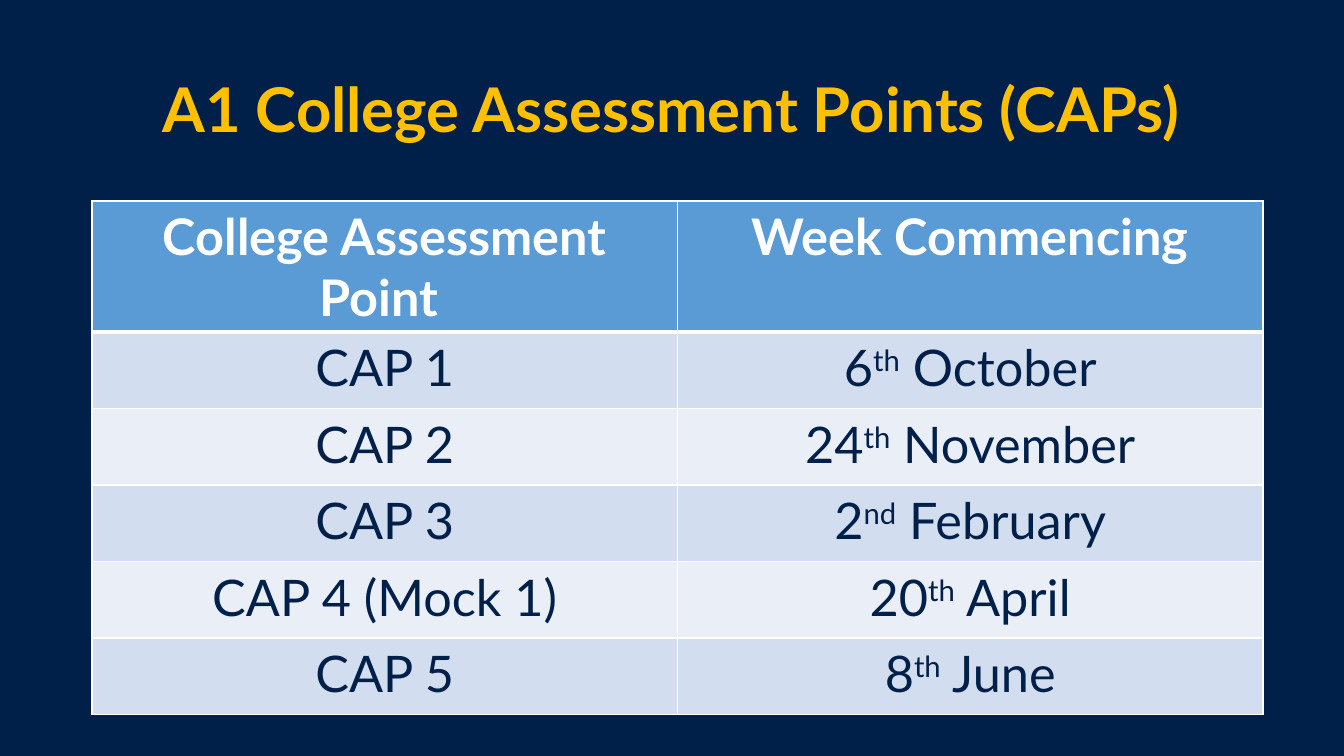
from dataclasses import dataclass

from lxml import etree
from pptx import Presentation
from pptx.dml.color import RGBColor
from pptx.enum.text import MSO_ANCHOR, PP_ALIGN
from pptx.oxml.ns import qn
from pptx.util import Emu, Pt

CENTER = PP_ALIGN.CENTER
MIDDLE = MSO_ANCHOR.MIDDLE
EMU_PER_PX = 914400 / 100.8
SLIDE_SIZE = (1344, 756)
TITLE_BOX = (92, 40, 1159, 146)
TABLE_BOX = (92, 201, 1171, 459)


@dataclass(frozen=True)
class Theme:
    font: str = "Lato"
    navy: str = "001F49"
    gold: str = "FFC000"
    white: str = "FFFFFF"
    header: str = "5B9BD5"
    bands: tuple = ("D2DEEF", "EAEFF7")
    title_size: int = 44
    table_size: int = 36
    border: int = 1
    header_border: int = 3


THEME = Theme()

HEADINGS = ("College Assessment Point ", "Week Commencing")
ASSESSMENTS = (
    ("CAP 1", "6", "th", " October"),
    ("CAP 2", "24", "th", " November"),
    ("CAP 3", "2", "nd", " February"),
    ("CAP 4 (Mock 1)", "20", "th", " April"),
    ("CAP 5", "8", "th", " June"),
)


def px(length):
    return Emu(round(length * EMU_PER_PX))


def add_run(paragraph, text, size, color, bold=False, superscript=False):
    run = paragraph.add_run()
    run.text = text
    run.font.name = THEME.font
    run.font.size = Pt(size)
    run.font.bold = bold
    run.font.color.rgb = RGBColor.from_string(color)
    if superscript:
        run.font._element.set("baseline", "30000")


def add_title(slide, box, text):
    shape = slide.shapes.add_textbox(*map(px, box))
    frame = shape.text_frame
    frame.word_wrap = True
    frame.vertical_anchor = MIDDLE
    paragraph = frame.paragraphs[0]
    paragraph.alignment = CENTER
    paragraph.line_spacing = 0.9
    add_run(paragraph, text, THEME.title_size, THEME.gold, bold=True)


def set_borders(cell, widths):
    properties = cell._tc.get_or_add_tcPr()
    for index, (side, width) in enumerate(widths.items()):
        line = etree.Element(qn(f"a:ln{side}"), w=str(Pt(width)))
        fill = etree.SubElement(line, qn("a:solidFill"))
        etree.SubElement(fill, qn("a:srgbClr"), val=THEME.white)
        properties.insert(index, line)


def fill_cell(cell, parts, fill, color, bold, top, bottom):
    cell.fill.solid()
    cell.fill.fore_color.rgb = RGBColor.from_string(fill)
    set_borders(cell, {"L": THEME.border, "R": THEME.border, "T": top, "B": bottom})
    paragraph = cell.text_frame.paragraphs[0]
    paragraph.alignment = CENTER
    for index, text in enumerate(parts):
        add_run(paragraph, text, THEME.table_size, color, bold, superscript=index == 1)


def add_assessment_table(slide, box, headings, assessments):
    row_count = len(assessments) + 1
    table = slide.shapes.add_table(row_count, len(headings), *map(px, box)).table
    for row in table.rows:
        row.height = px(box[3] / row_count)
    for column, heading in enumerate(headings):
        fill_cell(table.cell(0, column), [heading], THEME.header, THEME.white, True,
                  THEME.border, THEME.header_border)
    for row, (name, *date) in enumerate(assessments, start=1):
        fill = THEME.bands[(row - 1) % len(THEME.bands)]
        top = THEME.header_border if row == 1 else THEME.border
        for column, parts in enumerate(([name], date)):
            fill_cell(table.cell(row, column), parts, fill, THEME.navy, False,
                      top, THEME.border)


def main():
    presentation = Presentation()
    presentation.slide_width, presentation.slide_height = map(px, SLIDE_SIZE)
    slide = presentation.slides.add_slide(presentation.slide_layouts[6])
    slide.background.fill.solid()
    slide.background.fill.fore_color.rgb = RGBColor.from_string(THEME.navy)
    add_title(slide, TITLE_BOX, "A1 College Assessment Points (CAPs)")
    add_assessment_table(slide, TABLE_BOX, HEADINGS, ASSESSMENTS)
    presentation.save("out.pptx")


if __name__ == "__main__":
    main()
